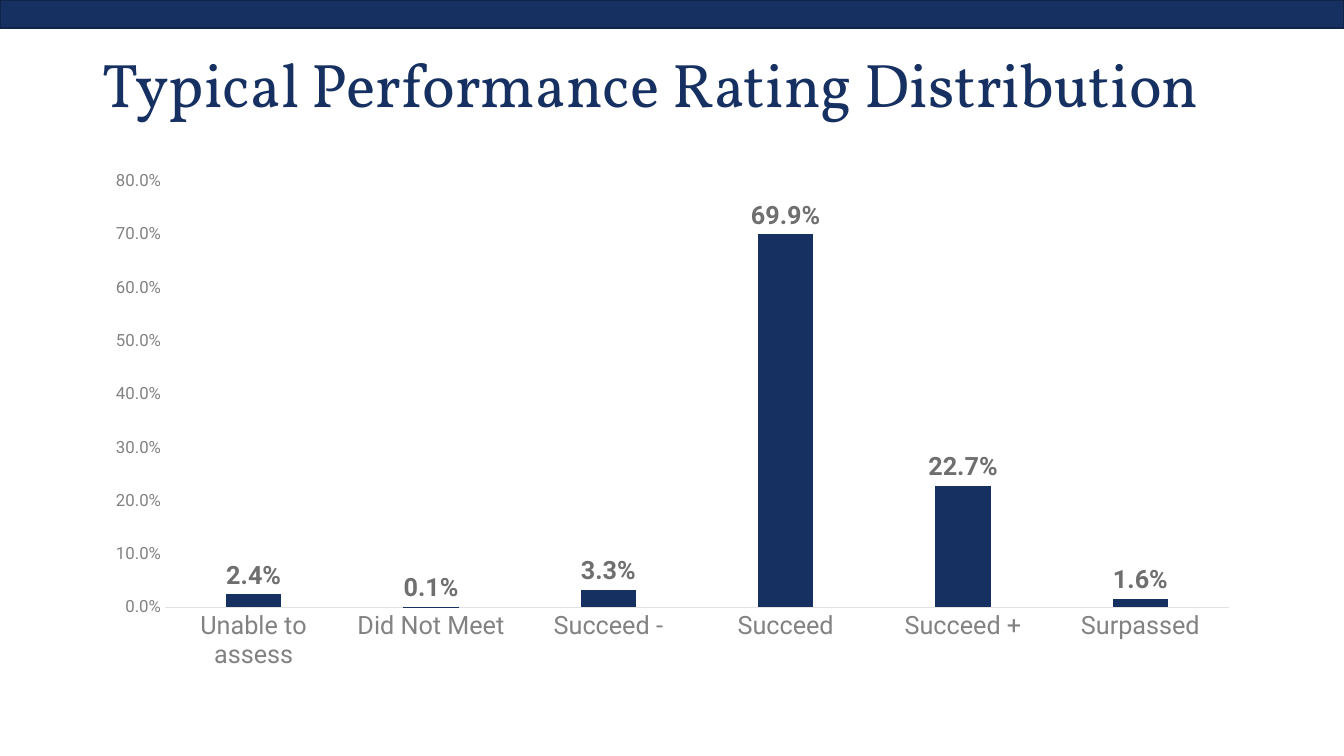
from pptx import Presentation
from pptx.chart.data import CategoryChartData
from pptx.dml.color import RGBColor
from pptx.enum.chart import XL_CHART_TYPE, XL_LABEL_POSITION, XL_TICK_MARK
from pptx.enum.shapes import MSO_SHAPE
from pptx.enum.text import MSO_ANCHOR
from pptx.util import Inches, Pt

TITLE = "Typical Performance Rating Distribution"
RATINGS = {
    "Unable to assess": 0.024,
    "Did Not Meet": 0.001,
    "Succeed -": 0.033,
    "Succeed": 0.699,
    "Succeed +": 0.227,
    "Surpassed": 0.016,
}
PERCENT = "0.0%"
NAVY = RGBColor(0x15, 0x30, 0x61)
BAND_EDGE = RGBColor(0x10, 0x24, 0x48)
TEXT_GRAY = RGBColor(0x3F, 0x3F, 0x3F)
LABEL_GRAY = RGBColor(0x6F, 0x6F, 0x6F)
AXIS_GRAY = RGBColor(0x82, 0x82, 0x82)
RULE_GRAY = RGBColor(0xE2, 0xE2, 0xE2)

WIDTH, HEIGHT = Inches(13.33), Inches(7.5)
MARGIN = Inches(0.92)
CONTENT_WIDTH = Inches(11.5)


def set_font(font, size, color, name="Roboto", bold=False):
    """Apply size, colour, typeface and weight to a font."""
    font.size, font.name, font.bold = Pt(size), name, bold
    font.color.rgb = color


def add_band(slide):
    """Draw the band along the top edge."""
    band = slide.shapes.add_shape(MSO_SHAPE.RECTANGLE, 0, 0, WIDTH, Inches(0.28))
    band.shadow.inherit = False
    band.fill.solid()
    band.fill.fore_color.rgb = NAVY
    band.line.color.rgb = BAND_EDGE
    band.line.width = Pt(1)


def add_title(slide):
    """Write the slide heading."""
    heading = slide.shapes.add_textbox(MARGIN, Inches(0.4), CONTENT_WIDTH, Inches(0.94))
    frame = heading.text_frame
    frame.word_wrap = True
    frame.vertical_anchor = MSO_ANCHOR.MIDDLE
    paragraph = frame.paragraphs[0]
    paragraph.text = TITLE
    paragraph.line_spacing = 0.9
    set_font(paragraph.font, 44, NAVY, "Vollkorn")


def add_distribution(slide):
    """Chart the share of each rating."""
    data = CategoryChartData(number_format=PERCENT)
    data.categories = list(RATINGS)
    data.add_series("Series 1", list(RATINGS.values()))
    chart = slide.shapes.add_chart(
        XL_CHART_TYPE.COLUMN_CLUSTERED, MARGIN, Inches(1.59), CONTENT_WIDTH, Inches(5.16), data
    ).chart
    set_font(chart.font, 10, TEXT_GRAY)
    chart.has_legend = chart.has_title = False

    for axis, size in ((chart.category_axis, 18), (chart.value_axis, 12)):
        axis.major_tick_mark = axis.minor_tick_mark = XL_TICK_MARK.NONE
        axis.has_major_gridlines = False
        set_font(axis.tick_labels.font, size, AXIS_GRAY)
    chart.category_axis.format.line.color.rgb = RULE_GRAY
    chart.category_axis.format.line.width = Pt(0.75)

    shares = chart.value_axis
    shares.format.line.fill.background()
    shares.minimum_scale, shares.maximum_scale, shares.major_unit = 0, 0.8, 0.1
    shares.tick_labels.number_format = PERCENT
    shares.tick_labels.number_format_is_linked = False

    plot = chart.plots[0]
    plot.gap_width, plot.overlap = 219, -27
    plot.vary_by_categories = False
    bars = plot.series[0]
    bars.format.fill.solid()
    bars.format.fill.fore_color.rgb = NAVY
    labels = bars.data_labels
    labels.show_value = True
    labels.position = XL_LABEL_POSITION.OUTSIDE_END
    labels.number_format = PERCENT
    labels.number_format_is_linked = False
    set_font(labels.font, 18, LABEL_GRAY, bold=True)


def main():
    """Build and save the slide."""
    deck = Presentation()
    deck.slide_width, deck.slide_height = WIDTH, HEIGHT
    slide = deck.slides.add_slide(deck.slide_layouts[6])
    add_band(slide)
    add_title(slide)
    add_distribution(slide)
    deck.save("out.pptx")


if __name__ == "__main__":
    main()
